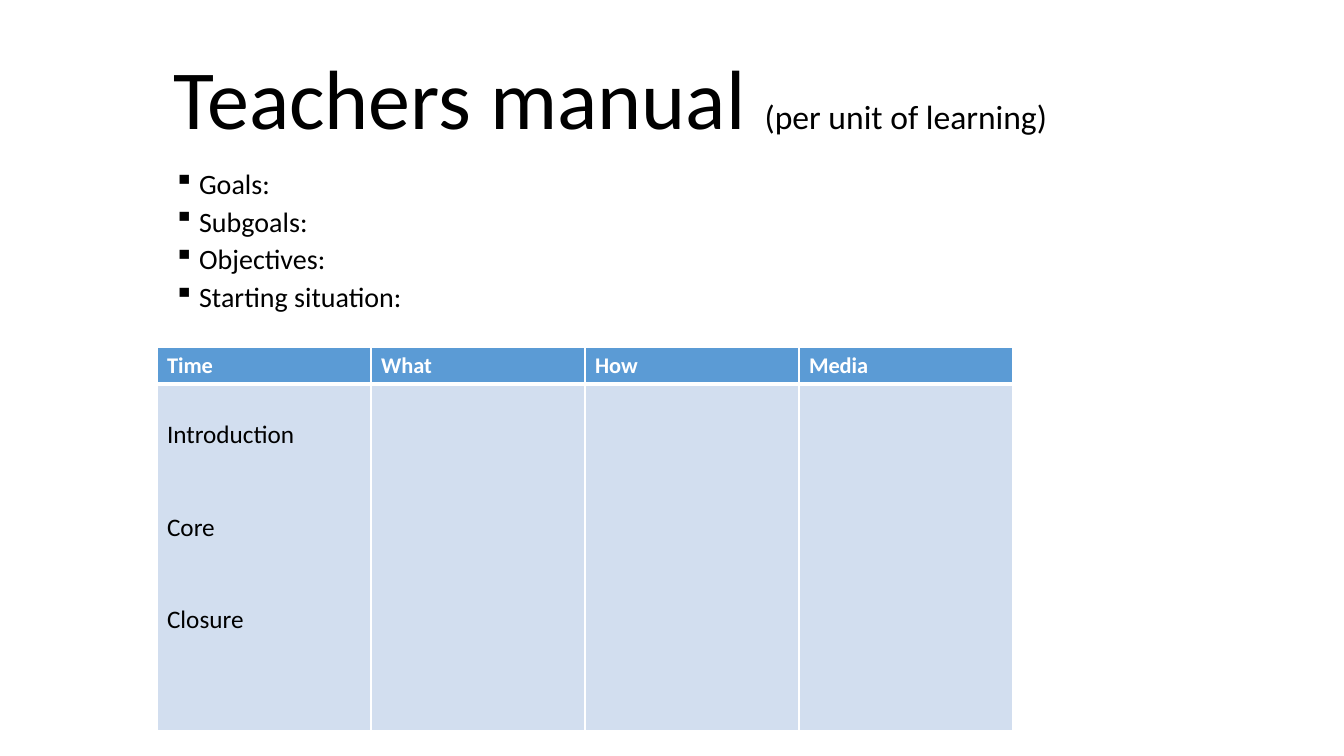
from lxml.etree import SubElement
from pptx import Presentation
from pptx.dml.color import RGBColor
from pptx.enum.text import MSO_ANCHOR
from pptx.oxml.ns import qn
from pptx.util import Emu, Pt

PX = 914400 / 100.8
BLACK, WHITE, BLUE, PALE = "000000", "FFFFFF", "5B9BD5", "D2DEEF"


def px(n):
    return Emu(round(n * PX))


def style(p, size, color, bold=False):
    for r in p.runs:
        r.font.name = "Calibri"
        r.font.size = Pt(size)
        r.font.bold = bold
        r.font.color.rgb = RGBColor.from_string(color)


prs = Presentation()
prs.slide_width, prs.slide_height = px(1344), px(756)
s = prs.slides.add_slide(prs.slide_layouts[6])

# Title
tf = s.shapes.add_textbox(px(164), px(39), px(1000), px(126)).text_frame
tf.word_wrap = True
tf.vertical_anchor = MSO_ANCHOR.MIDDLE
p = tf.paragraphs[0]
p.line_spacing = 0.9
for text in ("Teachers manual ", "(per unit of learning)"):
    p.add_run().text = text
style(p, 60, BLACK)
p.runs[1].font.size = Pt(24)

# Bulleted list
tf = s.shapes.add_textbox(px(164), px(171), px(913), px(158)).text_frame
tf.word_wrap = True
tf.text = "Goals:\nSubgoals:\nObjectives:\nStarting situation:"
for p in tf.paragraphs:
    p.line_spacing = 0.7
    p.space_before = Pt(10)
    style(p, 20, BLACK)
    pPr = p._p.get_or_add_pPr()
    pPr.set("marL", "228600")
    pPr.set("indent", "-228600")
    SubElement(pPr, qn("a:buChar"), char="▪")

# Lesson table
headers = ["Time", "What", "How", "Media"]
table = s.shapes.add_table(2, len(headers), px(157), px(347),
                           px(856), px(384)).table
for column in table.columns:
    column.width = px(214)
table.rows[0].height, table.rows[1].height = px(37), px(347)

for i, header in enumerate(headers):
    table.cell(0, i).text = header
phases = table.cell(1, 0)
phases.text = "Introduction\nCore\nClosure"
phases.margin_top = px(36)
for p in phases.text_frame.paragraphs[1:]:
    p.space_before = Pt(44)

# Cell borders, fills and fonts
looks = [(BLUE, WHITE, 16, True, "lnB"), (PALE, BLACK, 18, False, "lnT")]
for row, (fill, color, size, bold, thick) in zip(table.rows, looks):
    for cell in row.cells:
        tcPr = cell._tc.get_or_add_tcPr()
        for side in ("lnL", "lnR", "lnT", "lnB"):
            width = Pt(3 if side == thick else 1)
            ln = SubElement(tcPr, qn(f"a:{side}"), w=str(width))
            SubElement(SubElement(ln, qn("a:solidFill")), qn("a:srgbClr"), val=WHITE)
        cell.fill.solid()
        cell.fill.fore_color.rgb = RGBColor.from_string(fill)
        for p in cell.text_frame.paragraphs:
            style(p, size, color, bold)

prs.save("out.pptx")
